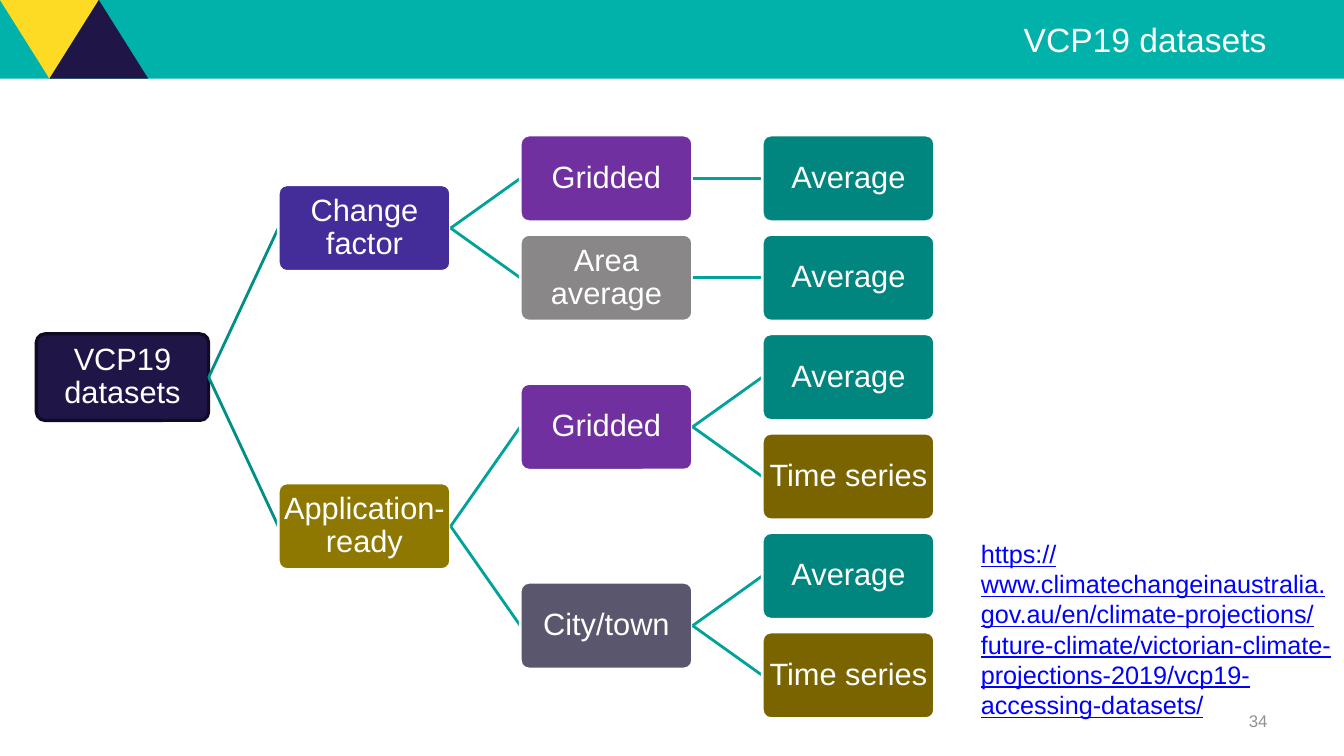
from itertools import count
from typing import NamedTuple

from lxml import etree
from pptx import Presentation
from pptx.dml.color import RGBColor
from pptx.enum.shapes import MSO_CONNECTOR, MSO_SHAPE
from pptx.enum.text import MSO_ANCHOR, PP_ALIGN
from pptx.oxml.ns import qn
from pptx.util import Inches, Pt

RECT = MSO_SHAPE.RECTANGLE
TRIANGLE = MSO_SHAPE.ISOSCELES_TRIANGLE
ROUNDED = MSO_SHAPE.ROUNDED_RECTANGLE
STRAIGHT = MSO_CONNECTOR.STRAIGHT
TOP, MIDDLE = MSO_ANCHOR.TOP, MSO_ANCHOR.MIDDLE
LEFT, CENTER, RIGHT = PP_ALIGN.LEFT, PP_ALIGN.CENTER, PP_ALIGN.RIGHT
LEFT_SIDE, RIGHT_SIDE = 1, 3

WHITE = RGBColor(0xFF, 0xFF, 0xFF)
TURQUOISE = RGBColor(0x00, 0xB2, 0xA9)
YELLOW = RGBColor(0xFD, 0xDA, 0x24)
NAVY = RGBColor(0x20, 0x15, 0x47)
DARK_NAVY = RGBColor(0x10, 0x0A, 0x24)
INDIGO = RGBColor(0x44, 0x2D, 0x98)
PURPLE = RGBColor(0x70, 0x30, 0xA0)
GREY = RGBColor(0x89, 0x87, 0x87)
SLATE = RGBColor(0x5A, 0x56, 0x6D)
OLIVE = RGBColor(0x8F, 0x78, 0x01)
DARK_OLIVE = RGBColor(0x7A, 0x64, 0x00)
TEAL = RGBColor(0x00, 0x85, 0x7F)
ROOT_BRANCH = RGBColor(0x00, 0x8F, 0x87)
BRANCH = RGBColor(0x00, 0xA2, 0x99)
PAGE_GREY = RGBColor(0x91, 0x91, 0x91)
LINK_BLUE = RGBColor(0x00, 0x00, 0xFF)

# Tree grid, in inches
TREE_LEFT, COLUMN_STEP = 0.36, 2.4
FIRST_LEAF, LAST_LEAF, LEAF_COUNT = 1.77, 6.7, 6
LEAF_STEP = (LAST_LEAF - FIRST_LEAF) / (LEAF_COUNT - 1)
NODE_W, NODE_H = 1.71, 0.86


class Node(NamedTuple):
    label: str
    color: RGBColor
    children: tuple = ()


AVERAGE = Node("Average", TEAL)
TIME_SERIES = Node("Time series", DARK_OLIVE)
DATASETS = Node("VCP19 datasets", NAVY, (
    Node("Change factor", INDIGO, (
        Node("Gridded", PURPLE, (AVERAGE,)),
        Node("Area average", GREY, (AVERAGE,)),
    )),
    Node("Application-ready", OLIVE, (
        Node("Gridded", PURPLE, (AVERAGE, TIME_SERIES)),
        Node("City/town", SLATE, (AVERAGE, TIME_SERIES)),
    )),
))
ACCESS_URL = ("https://www.climatechangeinaustralia.gov.au/en/climate-projections/"
              "future-climate/victorian-climate-projections-2019/"
              "vcp19-accessing-datasets/")


class SlideBuilder:
    font_name = "Arial"

    def __init__(self, slide):
        self.shapes = slide.shapes

    def fill_text(self, shape, text, size, color, align, anchor=MIDDLE,
                  inset=None, spacing=None, underline=None):
        frame = shape.text_frame
        frame.word_wrap = True
        frame.vertical_anchor = anchor
        if inset is not None:
            for side in ("left", "right", "top", "bottom"):
                setattr(frame, f"margin_{side}", Inches(inset))
        paragraph = frame.paragraphs[0]
        paragraph.alignment = align
        paragraph.line_spacing = spacing
        run = paragraph.add_run()
        run.text = text
        font_format = {"name": self.font_name, "size": Pt(size), "underline": underline}
        for key, value in font_format.items():
            setattr(run.font, key, value)
        run.font.color.rgb = color

    def text(self, box, text, size, color, align, **options):
        textbox = self.shapes.add_textbox(*map(Inches, box))
        self.fill_text(textbox, text, size, color, align, **options)

    def block(self, kind, box, fill, line=None, width=2, rotation=0):
        shape = self.shapes.add_shape(kind, *map(Inches, box))
        shape.shadow.inherit = False
        shape.rotation = rotation
        shape.fill.solid()
        shape.fill.fore_color.rgb = fill
        if line is None:
            shape.line.fill.background()
        else:
            shape.line.color.rgb = line
            shape.line.width = Pt(width)
        return shape

    def branch(self, parent, start, end, color):
        connector = self.shapes.add_connector(STRAIGHT, *map(Inches, start + end))
        connector.line.color.rgb = color
        connector.line.width = Pt(2)
        etree.SubElement(connector._element.spPr, qn("a:effectLst"))
        connector.begin_connect(parent, RIGHT_SIDE)
        return connector

    def tree(self, placed, depth=0):
        """Draw a placed node, then each branch beneath the child it leads to."""
        node, center, children = placed
        left = TREE_LEFT + depth * COLUMN_STEP
        line, width = (WHITE, 2) if depth else (DARK_NAVY, 2.25)
        box = (left, center - NODE_H / 2, NODE_W, NODE_H)
        shape = self.block(ROUNDED, box, node.color, line, width)
        shape.adjustments[0] = 0.1
        self.fill_text(shape, node.label, 22, WHITE, CENTER, inset=0.02, spacing=0.9)
        for child in children:
            connector = self.branch(shape, (left + NODE_W, center),
                                    (left + COLUMN_STEP, child[1]),
                                    BRANCH if depth else ROOT_BRANCH)
            connector.end_connect(self.tree(child, depth + 1), LEFT_SIDE)
        return shape


def place(node, leaf_rows):
    """Give leaves successive rows and centre each parent on its children."""
    children = [place(child, leaf_rows) for child in node.children]
    if children:
        center = sum(child[1] for child in children) / len(children)
    else:
        center = FIRST_LEAF + next(leaf_rows) * LEAF_STEP
    return node, center, children


def main():
    deck = Presentation()
    deck.slide_width, deck.slide_height = Inches(13.33), Inches(7.5)
    builder = SlideBuilder(deck.slides.add_slide(deck.slide_layouts[6]))

    # Header band
    builder.block(RECT, (0, 0, 13.33, 0.78), TURQUOISE)
    builder.block(TRIANGLE, (0, 0, 0.98, 0.78), YELLOW, rotation=180)
    builder.block(TRIANGLE, (0.49, 0, 0.98, 0.78), NAVY)
    builder.text((1.73, 0, 10.93, 0.78), "VCP19 datasets", 24, WHITE, RIGHT)

    # Dataset tree
    builder.tree(place(DATASETS, count()))

    # Access address and page number
    builder.text((9.63, 5.29, 3.7, 1.92), ACCESS_URL, 18, LINK_BLUE, LEFT,
                 anchor=TOP, underline=True)
    builder.text((9.56, 6.95, 3.11, 0.4), "34", 12, PAGE_GREY, RIGHT)

    deck.save("out.pptx")


if __name__ == "__main__":
    main()
